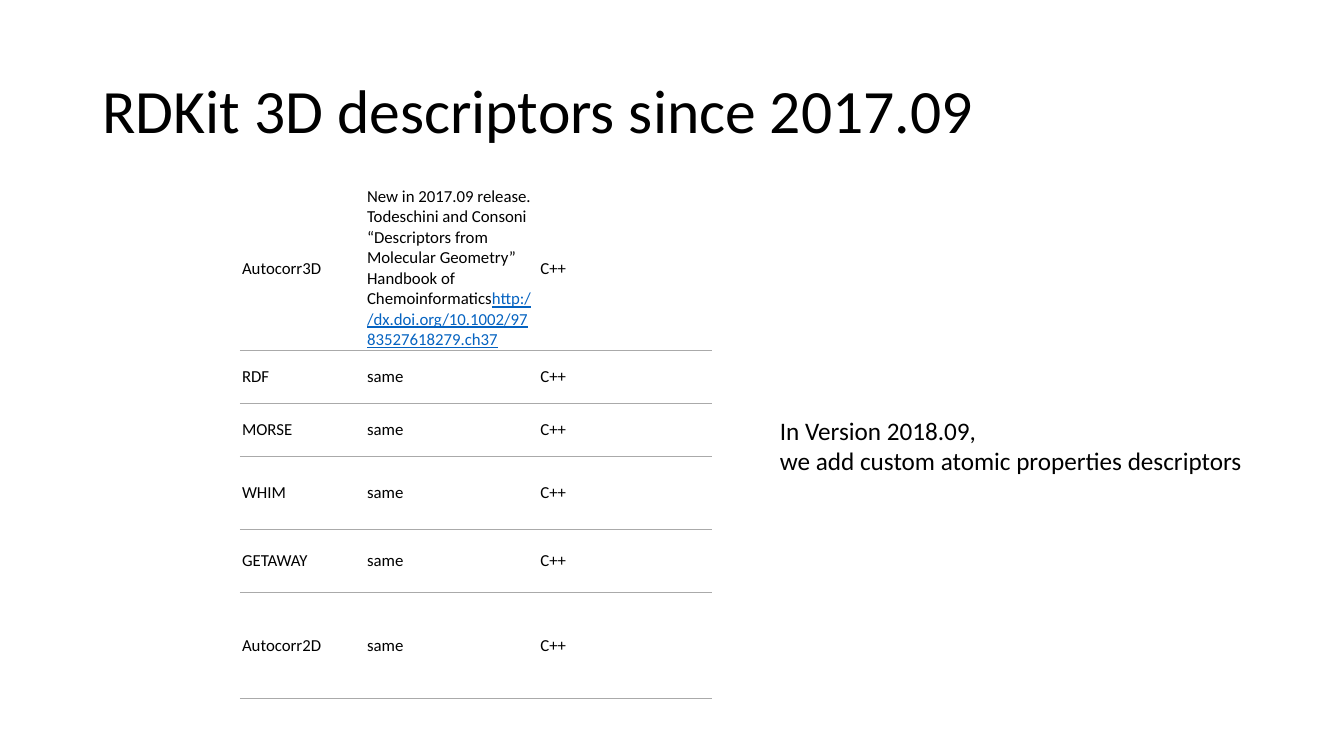
from lxml import etree
from pptx import Presentation
from pptx.dml.color import RGBColor
from pptx.enum import text
from pptx.oxml import ns
from pptx.util import Pt

COLORS = {"ink": "000000", "paper": "FFFFFF", "rule": "AAAAAA", "link": "0563C1"}


def style(font, size, color="ink"):
    for key, value in {"name": "Calibri", "size": Pt(size), "bold": False}.items():
        setattr(font, key, value)
    font.color.rgb = RGBColor.from_string(COLORS[color])


def add_border(cell, side, color=None):
    line = etree.SubElement(cell._tc.get_or_add_tcPr(), ns.qn(f"a:ln{side}"), w=str(Pt(0.75)))
    if color is None:
        etree.SubElement(line, ns.qn("a:noFill"))
    else:
        fill = etree.SubElement(line, ns.qn("a:solidFill"))
        etree.SubElement(fill, ns.qn("a:srgbClr"), val=COLORS[color])


deck = Presentation()
deck.slide_width, deck.slide_height = Pt(960), Pt(540)
slide = deck.slides.add_slide(deck.slide_layouts[5])

title = slide.shapes.title
title.left, title.top, title.width, title.height = Pt(66), Pt(28.75), Pt(828), Pt(104.4)
title.text_frame.text = "RDKit 3D descriptors since 2017.09"
title.text_frame.vertical_anchor = text.MSO_ANCHOR.MIDDLE
heading = title.text_frame.paragraphs[0]
heading.alignment = text.PP_ALIGN.LEFT
heading.line_spacing = 0.9
style(heading.runs[0].font, 44)

reference = (
    "New in 2017.09 release. Todeschini and Consoni “Descriptors from "
    "Molecular Geometry” Handbook of Chemoinformatics"
)
doi = "http://dx.doi.org/10.1002/9783527618279.ch37"
descriptors = [
    ("Autocorr3D", reference, 104.4),
    ("RDF", "same", 38),
    ("MORSE", "same", 38),
    ("WHIM", "same", 52),
    ("GETAWAY", "same", 45.2),
    ("Autocorr2D", "same", 75.8),
]
column_widths = [89.3, 123.8, 123.8]
cell_format = {
    "margin_left": Pt(1.5),
    "margin_right": Pt(3),
    "margin_top": 0,
    "margin_bottom": 0,
    "vertical_anchor": text.MSO_ANCHOR.MIDDLE,
}

descriptor_table = slide.shapes.add_table(
    len(descriptors), len(column_widths), Pt(171.4), Pt(133.2),
    Pt(sum(column_widths)), Pt(sum(height for _, _, height in descriptors)),
).table
descriptor_table.first_row = descriptor_table.horz_banding = False
for column, width in zip(descriptor_table.columns, column_widths):
    column.width = Pt(width)

for row, (name, source, height) in enumerate(descriptors):
    descriptor_table.rows[row].height = Pt(height)
    for col, wording in enumerate((name, source, "C++")):
        cell = descriptor_table.cell(row, col)
        for key, value in cell_format.items():
            setattr(cell, key, value)
        add_border(cell, "L")
        add_border(cell, "R")
        add_border(cell, "T", "rule" if row else None)
        add_border(cell, "B", "rule")
        cell.fill.solid()
        cell.fill.fore_color.rgb = RGBColor.from_string(COLORS["paper"])
        cell.text = wording
        style(cell.text_frame.paragraphs[0].runs[0].font, 12)

doi_run = descriptor_table.cell(0, 1).text_frame.paragraphs[0].add_run()
doi_run.text = doi
style(doi_run.font, 12, "link")
doi_run.font.underline = True

version_note = slide.shapes.add_textbox(Pt(550), Pt(293), Pt(348.5), Pt(51)).text_frame
version_note.word_wrap = False
version_note.auto_size = text.MSO_AUTO_SIZE.SHAPE_TO_FIT_TEXT
version_note.text = "In Version 2018.09,\nwe add custom atomic properties descriptors"
for paragraph in version_note.paragraphs:
    style(paragraph.runs[0].font, 18)

deck.save("out.pptx")
